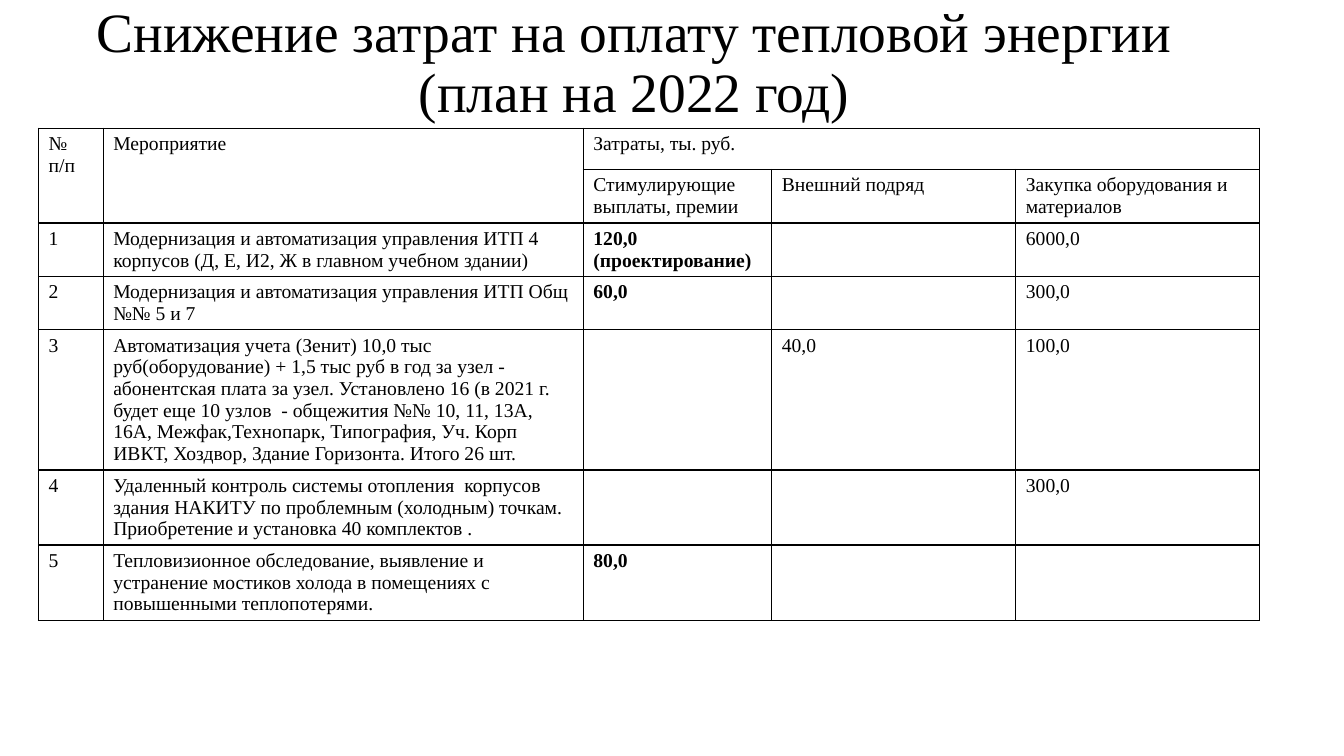
from lxml import etree
from pptx import Presentation
from pptx import util as u
from pptx.dml.color import RGBColor
from pptx.enum import text
from pptx.oxml.ns import qn

COLORS = {"ink": "000000", "border": "000000"}
FONT = "Times New Roman"
TITLE = "Снижение затрат на оплату тепловой энергии (план на 2022 год)"
COL_WIDTHS = [1.63, 12.1, 4.75, 6.15, 6.15]
ROW_HEIGHT = 1.04
BONUS_COL = 2
HEADER_ROWS = 2
MERGES = [((0, 0), (1, 0)), ((0, 1), (1, 1)), ((0, 2), (0, 4))]
ROWS = [
    ["№ п/п", "Мероприятие", "Затраты, ты. руб.", "", ""],
    ["", "", "Стимулирующие выплаты, премии", "Внешний подряд",
     "Закупка оборудования и материалов"],
    ["1", "Модернизация и автоматизация управления ИТП 4 корпусов "
     "(Д, Е, И2, Ж в главном учебном здании)",
     "120,0 (проектирование)", "", "6000,0"],
    ["2", "Модернизация и автоматизация управления ИТП Общ №№ 5 и 7",
     "60,0", "", "300,0"],
    ["3", "Автоматизация учета (Зенит) 10,0 тыс руб(оборудование) + 1,5 тыс руб "
     "в год за узел - абонентская плата за узел. Установлено 16 (в 2021 г. "
     "будет еще 10 узлов  - общежития №№ 10, 11, 13А, 16А, Межфак,Технопарк, "
     "Типография, Уч. Корп ИВКТ, Хоздвор, Здание Горизонта. Итого 26 шт.",
     "", "40,0", "100,0"],
    ["4", "Удаленный контроль системы отопления  корпусов здания НАКИТУ по "
     "проблемным (холодным) точкам.  Приобретение и установка 40 комплектов .",
     "", "", "300,0"],
    ["5", "Тепловизионное обследование, выявление и устранение мостиков холода "
     "в помещениях с повышенными теплопотерями.", "80,0", "", ""],
]


def format_runs(p, size, bold=False):
    for r in p.runs:
        r.font.name = FONT
        r.font.size = u.Pt(size)
        r.font.bold = bold
        r.font.color.rgb = RGBColor.from_string(COLORS["ink"])


def set_borders(cell):
    tc_pr = cell._tc.get_or_add_tcPr()
    # Borders come before the fill in the cell properties
    for i, side in enumerate(("lnL", "lnR", "lnT", "lnB")):
        ln = etree.Element(qn("a:" + side), w=str(u.Pt(1)))
        fill = etree.SubElement(ln, qn("a:solidFill"))
        etree.SubElement(fill, qn("a:srgbClr"), val=COLORS["border"])
        tc_pr.insert(i, ln)


def add_title(s, left, top, width, height):
    sp = s.shapes.title
    sp.left, sp.top, sp.width, sp.height = map(u.Cm, (left, top, width, height))
    tf = sp.text_frame
    tf.text = TITLE
    tf.word_wrap = True
    tf.auto_size = text.MSO_AUTO_SIZE.NONE
    tf.vertical_anchor = text.MSO_ANCHOR.MIDDLE
    p = tf.paragraphs[0]
    p.alignment = text.PP_ALIGN.CENTER
    p.line_spacing = 0.9
    format_runs(p, 39.6)


def add_cost_table(s, left, top):
    table = s.shapes.add_table(
        len(ROWS), len(COL_WIDTHS), u.Cm(left), u.Cm(top),
        u.Cm(sum(COL_WIDTHS)), u.Cm(ROW_HEIGHT * len(ROWS))).table
    table.first_row = table.horz_banding = False
    for col, width in zip(table.columns, COL_WIDTHS):
        col.width = u.Cm(width)
    for row in table.rows:
        row.height = u.Cm(ROW_HEIGHT)

    # Cell text, fill and borders
    for i, values in enumerate(ROWS):
        for j, value in enumerate(values):
            cell = table.cell(i, j)
            cell.fill.background()
            set_borders(cell)
            if value:
                cell.text = value
                bold = i >= HEADER_ROWS and j == BONUS_COL
                format_runs(cell.text_frame.paragraphs[0], 14, bold)

    # Two-level header
    for first, last in MERGES:
        table.cell(*first).merge(table.cell(*last))


def main():
    prs = Presentation()
    prs.slide_width, prs.slide_height = u.Cm(33.87), u.Cm(19.05)
    s = prs.slides.add_slide(prs.slide_layouts[5])
    add_title(s, 2.16, 0.25, 27.64, 2.77)
    add_cost_table(s, 0.97, 3.23)
    prs.save("out.pptx")


if __name__ == "__main__":
    main()
